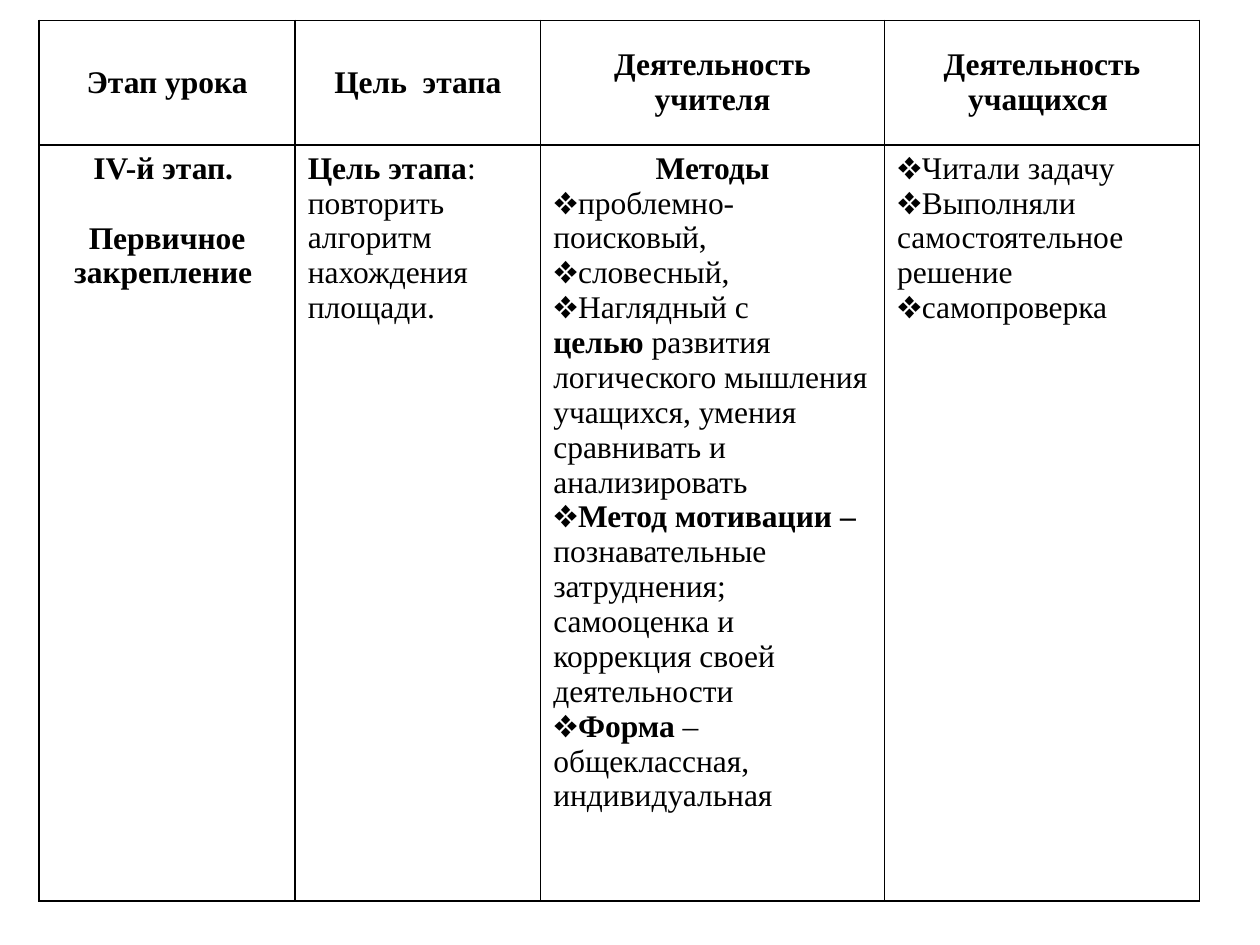
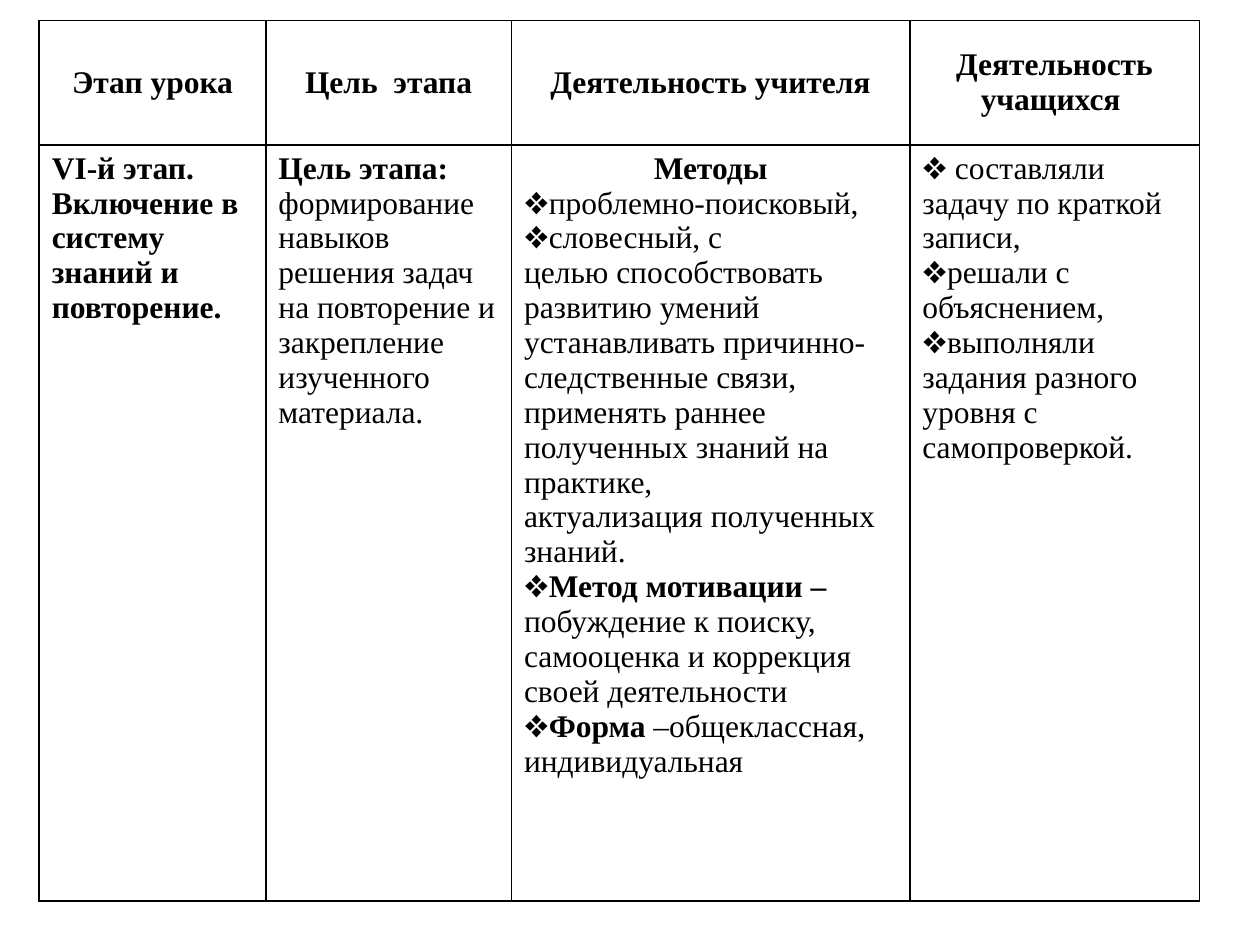
"""Build two lesson-stage slides, each holding one table."""
from dataclasses import dataclass

from lxml import etree
from pptx import Presentation
from pptx import util as u
from pptx.dml.color import RGBColor
from pptx.enum import text
from pptx.oxml import ns

BLACK = RGBColor(0x00, 0x00, 0x00)
WHITE = RGBColor(0xFF, 0xFF, 0xFF)
FONT = "Times New Roman"
FONT_SIZE = u.Pt(18)
BORDER = u.Pt(1)
BULLET = "❖"
TABLE_LEFT, TABLE_TOP = u.Cm(0.79), u.Cm(0.41)
ROW_HEIGHTS = (u.Cm(2.51), u.Cm(15.24))


@dataclass(frozen=True)
class Line:
    bold: str = ""
    plain: str = ""
    bullet: bool = False
    centred: bool = False
    before: float = 0


@dataclass(frozen=True)
class Stage:
    widths: tuple[float, ...]
    cells: tuple[list[Line], ...]


def heading(*words: str) -> list[Line]:
    return [Line(bold=word, centred=True) for word in words]


def bullets(*items: str) -> list[Line]:
    return [Line(plain=item, bullet=True) for item in items]


def motivation_and_form(motivation: str) -> list[Line]:
    return [
        Line("Метод мотивации – ", motivation, bullet=True),
        Line("Форма", " –общеклассная, индивидуальная", bullet=True),
    ]


HEADER = (
    heading("Этап урока"),
    heading("Цель  этапа"),
    heading("Деятельность учителя"),
    heading("Деятельность", "учащихся "),
)

STAGES = (
    Stage(
        (5.16, 4.95, 6.93, 6.35),
        (
            heading("IV-й этап. ")
            + [Line("Первичное закрепление ", centred=True, before=20)],
            [Line("Цель этапа", ": повторить алгоритм нахождения площади.")],
            heading("Методы")
            + bullets("проблемно-поисковый,", "словесный,", "Наглядный с")
            + [
                Line("целью ", "развития логического мышления учащихся, "
                     "умения сравнивать и"),
                Line(plain="анализировать"),
            ]
            + motivation_and_form("познавательные затруднения; самооценка "
                                  "и коррекция своей деятельности"),
            bullets("Читали задачу", "Выполняли самостоятельное решение",
                    "самопроверка"),
        ),
    ),
    Stage(
        (4.57, 4.95, 8.03, 5.84),
        (
            [Line("VI-й этап. Включение в систему знаний и повторение.")],
            [Line("Цель этапа:", " формирование навыков решения задач на "
                  "повторение и закрепление изученного материала.")],
            heading("Методы")
            + bullets("проблемно-поисковый,", "словесный, с")
            + [
                Line(plain="целью способствовать развитию умений "
                     "устанавливать причинно-следственные связи,"),
                Line(plain="применять раннее полученных знаний на практике,"),
                Line(plain="актуализация полученных знаний."),
            ]
            + motivation_and_form("побуждение к поиску, самооценка "
                                  "и коррекция своей деятельности"),
            bullets(" составляли задачу по краткой записи,",
                    "решали с объяснением,",
                    "выполняли задания разного уровня с самопроверкой."),
        ),
    ),
)


def add_bullet(para) -> None:
    properties = para._p.get_or_add_pPr()
    properties.set("marL", "0")
    properties.set("indent", "0")
    etree.SubElement(properties, ns.qn("a:buFont")).set("typeface", FONT)
    etree.SubElement(properties, ns.qn("a:buChar")).set("char", BULLET)


def write_line(para, line: Line) -> None:
    if line.bullet:
        add_bullet(para)
    para.alignment = (text.PP_ALIGN.CENTER if line.centred
                      else text.PP_ALIGN.LEFT)
    if line.before:
        para.space_before = u.Pt(line.before)
    for words, is_bold in ((line.bold, True), (line.plain, False)):
        if words:
            span = para.add_run()
            span.text = words
            span.font.name = FONT
            span.font.size = FONT_SIZE
            span.font.bold = is_bold
            span.font.color.rgb = BLACK


def style_cell(cell) -> None:
    properties = cell._tc.get_or_add_tcPr()
    for side in ("lnL", "lnR", "lnT", "lnB"):
        edge = etree.SubElement(properties, ns.qn(f"a:{side}"), w=str(BORDER))
        fill = etree.SubElement(edge, ns.qn("a:solidFill"))
        etree.SubElement(fill, ns.qn("a:srgbClr"), val=str(BLACK))
    cell.fill.solid()
    cell.fill.fore_color.rgb = WHITE


def fill_cell(cell, lines: list[Line], anchor) -> None:
    style_cell(cell)
    cell.vertical_anchor = anchor
    frame = cell.text_frame
    for index, line in enumerate(lines):
        write_line(frame.add_paragraph() if index else frame.paragraphs[0],
                   line)


def add_stage(deck, stage: Stage) -> None:
    page = deck.slides.add_slide(deck.slide_layouts[6])
    widths = [u.Cm(width) for width in stage.widths]
    table = page.shapes.add_table(
        len(ROW_HEIGHTS), len(widths), TABLE_LEFT, TABLE_TOP,
        sum(widths), sum(ROW_HEIGHTS)).table
    table.first_row = table.horz_banding = False
    for column, width in zip(table.columns, widths):
        column.width = width
    rows = ((HEADER, text.MSO_ANCHOR.MIDDLE),
            (stage.cells, text.MSO_ANCHOR.TOP))
    for row, height, (cells, anchor) in zip(table.rows, ROW_HEIGHTS, rows):
        row.height = height
        for cell, lines in zip(row.cells, cells):
            fill_cell(cell, lines, anchor)


def main() -> None:
    deck = Presentation()
    deck.slide_width, deck.slide_height = u.Cm(25.4), u.Cm(19.05)
    for stage in STAGES:
        add_stage(deck, stage)
    deck.save("out.pptx")


if __name__ == "__main__":
    main()
